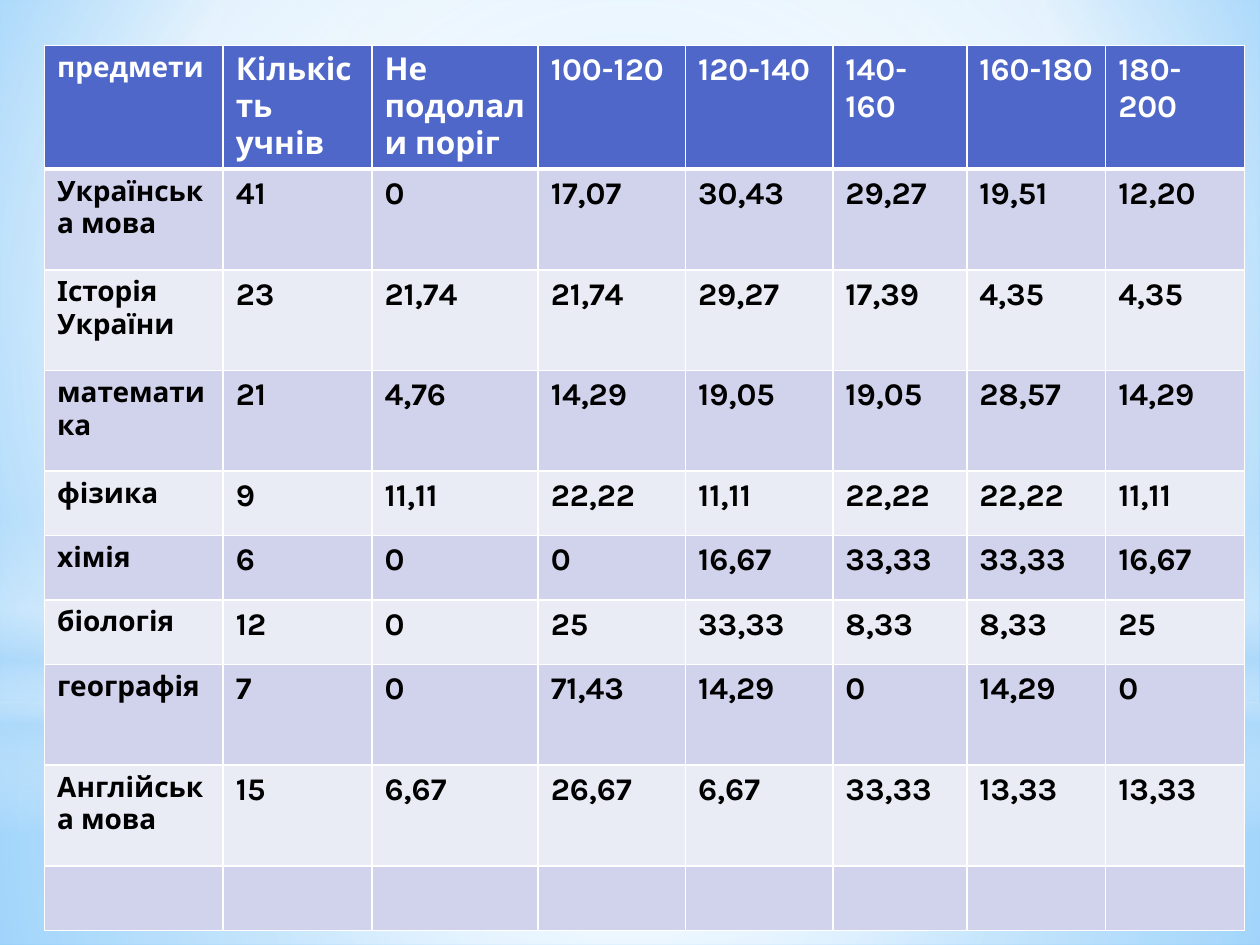
from dataclasses import dataclass

from lxml import etree
from pptx import Presentation
from pptx.dml.color import RGBColor
from pptx.enum.shapes import MSO_SHAPE
from pptx.oxml.ns import qn
from pptx.util import Cm, Pt

RECTANGLE = MSO_SHAPE.RECTANGLE
OVAL = MSO_SHAPE.OVAL


@dataclass(frozen=True)
class Theme:
    """Colours, font and type sizes of the slide."""
    font: str = "Karla"
    subject_size: int = 16
    value_size: int = 18
    white: str = "FFFFFF"
    text: str = "000000"
    header: str = "4E67C8"
    odd_band: str = "D0D3EB"
    even_band: str = "E9EBF5"
    haze: str = "B4DCFA"
    sky: str = "9ED5FF"
    deep_sky: str = "5BB9FF"
    thin_line: int = 1
    thick_line: int = 3


THEME = Theme()
CENTRE = (50, 50, 50, 50)
COLUMN_WIDTHS = (3.6, 3, 3.35, 2.97, 2.97, 2.7, 2.8, 2.8)
TALL, SHORT = 2.03, 1.3
ROW_HEIGHTS = (TALL,) * 4 + (SHORT,) * 3 + (TALL,) * 2 + (SHORT,)
RESULTS = (
    ("предмети", "Кількість учнів", "Не подолали поріг", "100-120", "120-140", "140-160", "160-180", "180-200"),
    ("Українська мова", "41", "0", "17,07", "30,43", "29,27", "19,51", "12,20"),
    ("Історія України", "23", "21,74", "21,74", "29,27", "17,39", "4,35", "4,35"),
    ("математика", "21", "4,76", "14,29", "19,05", "19,05", "28,57", "14,29"),
    ("фізика", "9", "11,11", "22,22", "11,11", "22,22", "22,22", "11,11"),
    ("хімія", "6", "0", "0", "16,67", "33,33", "33,33", "16,67"),
    ("біологія", "12", "0", "25", "33,33", "8,33", "8,33", "25"),
    ("географія", "7", "0", "71,43", "14,29", "0", "14,29", "0"),
    ("Англійська мова", "15", "6,67", "26,67", "6,67", "33,33", "13,33", "13,33"),
    ("",) * len(COLUMN_WIDTHS),
)


def add_colour(parent, colour, opacity=100):
    """Append an RGB colour with an opacity in percent."""
    element = etree.SubElement(parent, qn("a:srgbClr"), val=colour)
    if opacity < 100:
        etree.SubElement(element, qn("a:alpha"), val=str(opacity * 1000))


def paint_gradient(fill, holder, stops, focus=None):
    """Fill the holder with a circular gradient, or a vertical one without a focus."""
    fill.solid()
    gradient = etree.Element(qn("a:gradFill"), rotWithShape="1")
    stop_list = etree.SubElement(gradient, qn("a:gsLst"))
    for position, *colour in stops:
        add_colour(etree.SubElement(stop_list, qn("a:gs"), pos=str(position * 1000)), *colour)
    if focus:
        circle = etree.SubElement(gradient, qn("a:path"), path="circle")
        sides = {side: str(inset * 1000) for side, inset in zip("ltrb", focus)}
        etree.SubElement(circle, qn("a:fillToRect"), sides)
    else:
        etree.SubElement(gradient, qn("a:lin"), ang=str(90 * 60000), scaled="0")
    holder.replace(holder.find(qn("a:solidFill")), gradient)


def add_glow(page, kind, top, height, stops, focus=None):
    """Add a full-width translucent shape without outline."""
    shape = page.shapes.add_shape(kind, Cm(0), Cm(top), Cm(25.4), Cm(height))
    shape.shadow.inherit = False
    shape.line.fill.background()
    paint_gradient(shape.fill, shape.element.spPr, stops, focus)


def add_backdrop(page):
    """Paint the sky background and its layers of haze."""
    white, haze = THEME.white, THEME.haze
    paint_gradient(page.background.fill, page.element.xpath(".//p:bgPr")[0],
                   ((0, THEME.sky), (60, white), (100, THEME.deep_sky)), (20, 10, 20, 60))
    add_glow(page, RECTANGLE, 14.17, 4.88, ((0, white, 91), (37, white, 76), (100, haze, 79)), CENTRE)
    add_glow(page, RECTANGLE, 0, 14.17, ((0, white, 89), (48, white, 62), (100, haze, 79)), CENTRE)
    add_glow(page, RECTANGLE, 10.46, 6.35,
             ((0, white, 0), (29, white, 30), (45, haze, 40), (55, white, 26), (65, haze, 60), (100, white, 0)))
    add_glow(page, OVAL, 4.45, 14.17, ((0, white), (56, white, 0)), CENTRE)


def set_borders(cell, top, bottom):
    """Draw white cell borders, with the top and bottom widths in points."""
    properties = cell._tc.get_or_add_tcPr()
    widths = {"L": THEME.thin_line, "R": THEME.thin_line, "T": top, "B": bottom}
    for index, (side, width) in enumerate(widths.items()):
        line = etree.Element(qn(f"a:ln{side}"), w=str(Pt(width)))
        add_colour(etree.SubElement(line, qn("a:solidFill")), THEME.white)
        properties.insert(index, line)


def style_cell(cell, row, column):
    """Set the fill, borders and type of a cell by its place."""
    band = THEME.odd_band if row % 2 else THEME.even_band
    cell.fill.solid()
    cell.fill.fore_color.rgb = RGBColor.from_string(band if row else THEME.header)
    set_borders(cell, THEME.thick_line if row == 1 else THEME.thin_line,
                THEME.thin_line if row else THEME.thick_line)
    for span in cell.text_frame.paragraphs[0].runs:
        span.font.name = THEME.font
        span.font.bold = True
        span.font.size = Pt(THEME.value_size if column else THEME.subject_size)
        span.font.color.rgb = RGBColor.from_string(THEME.text if row else THEME.white)


def add_results_table(page):
    """Add the table of exam results by subject."""
    frame = page.shapes.add_table(len(RESULTS), len(COLUMN_WIDTHS), Cm(0.9), Cm(0.92),
                                  Cm(sum(COLUMN_WIDTHS)), Cm(sum(ROW_HEIGHTS)))
    table = frame.table
    table.first_row = table.horz_banding = False
    for column, width in zip(table.columns, COLUMN_WIDTHS):
        column.width = Cm(width)
    for row, height in zip(table.rows, ROW_HEIGHTS):
        row.height = Cm(height)
    for row, texts in enumerate(RESULTS):
        for column, text in enumerate(texts):
            cell = table.cell(row, column)
            cell.text_frame.text = text
            style_cell(cell, row, column)


def main():
    """Build and save the slide."""
    deck = Presentation()
    deck.slide_width, deck.slide_height = Cm(25.4), Cm(19.05)
    page = deck.slides.add_slide(deck.slide_layouts[6])
    add_backdrop(page)
    add_results_table(page)
    deck.save("out.pptx")


if __name__ == "__main__":
    main()
